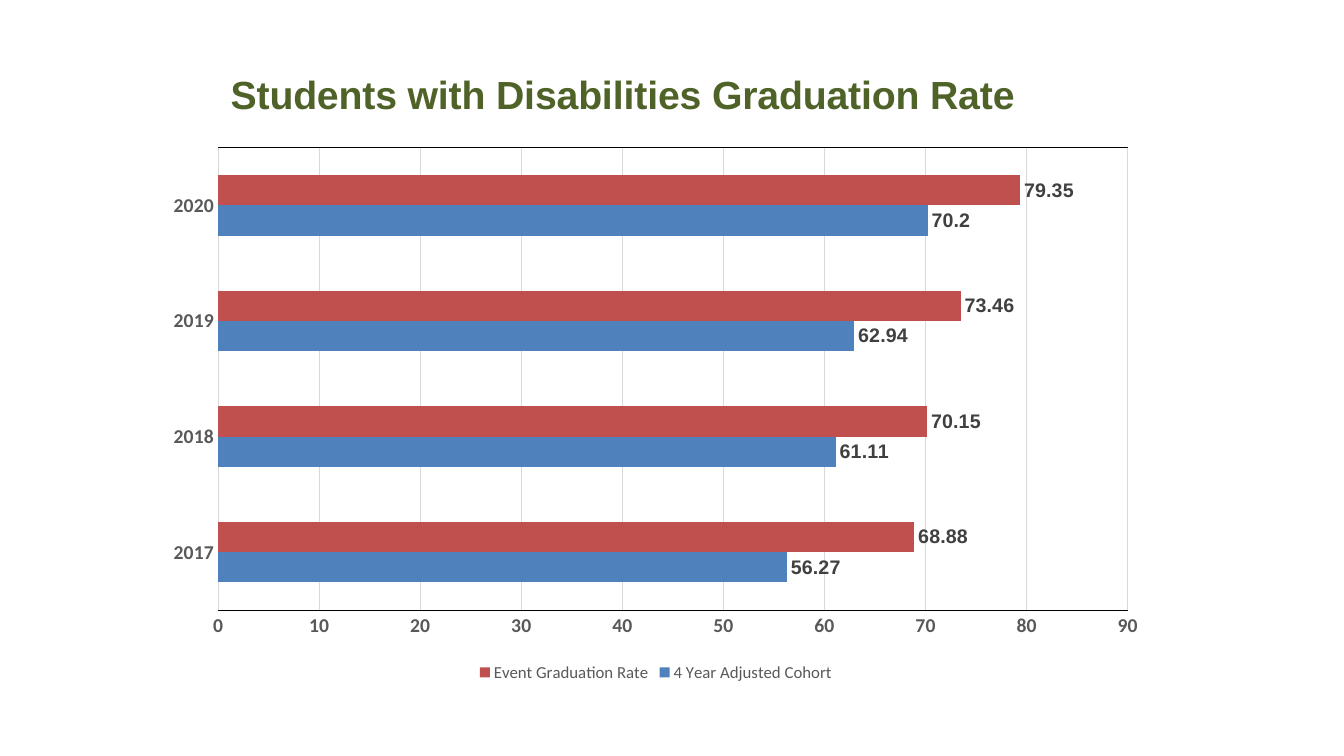
from lxml import etree
from pptx import Presentation
from pptx.chart.data import CategoryChartData
from pptx.dml.color import RGBColor
from pptx.enum.chart import (XL_CHART_TYPE, XL_LABEL_POSITION as LabelPos,
                             XL_LEGEND_POSITION as LegendPos, XL_TICK_MARK as Tick)
from pptx.oxml import parse_xml
from pptx.oxml.ns import nsdecls, qn
from pptx.util import Inches, Pt

BLUE = RGBColor(0x4F, 0x81, 0xBD)
RED = RGBColor(0xC0, 0x50, 0x4D)
GREEN = RGBColor(0x4F, 0x62, 0x28)
GRAY = RGBColor(0x59, 0x59, 0x59)
DARK = RGBColor(0x40, 0x40, 0x40)
LIGHT = RGBColor(0xD9, 0xD9, 0xD9)
BLACK = RGBColor(0, 0, 0)

TITLE = "Students with Disabilities Graduation Rate"
YEARS = ["2017", "2018", "2019", "2020"]
SERIES = [
    ("4 Year Adjusted Cohort", [56.27, 61.11, 62.94, 70.2], BLUE),
    ("Event Graduation Rate", [68.88, 70.15, 73.46, 79.35], RED),
]
CHART_BOX = (1.52, 0.5, 9.97, 6.31)
# Shares of the chart's size
TITLE_POS = {"x": 0.07, "y": 0.02}
PLOT_BOX = {"x": 0.0645, "y": 0.153, "w": 0.905, "h": 0.727}


def set_font(font, size, color, bold=False, name="Calibri"):
    font.size, font.bold, font.name = Pt(size), bold, name
    font.color.rgb = color


def set_layout(element, index, shares, inner=False):
    """Place a chart part by shares of the chart's size."""
    for old in element.findall(qn("c:layout")):
        element.remove(old)
    layout = parse_xml(f'<c:layout {nsdecls("c")}><c:manualLayout/></c:layout>')
    values = [("layoutTarget", "inner")] if inner else []
    values += [("xMode", "edge"), ("yMode", "edge"), *shares.items()]
    for tag, value in values:
        etree.SubElement(layout[0], qn(f"c:{tag}")).set("val", str(value))
    element.insert(index, layout)


def add_plot_border(plot_area):
    plot_area.append(parse_xml(
        f'<c:spPr {nsdecls("c", "a")}><a:noFill/><a:ln w="9525"><a:solidFill>'
        f'<a:srgbClr val="{BLACK}"/></a:solidFill></a:ln></c:spPr>'))


prs = Presentation()
prs.slide_width, prs.slide_height = Inches(13.33), Inches(7.5)
s = prs.slides.add_slide(prs.slide_layouts[6])

data = CategoryChartData()
data.categories = YEARS
for name, values, _ in SERIES:
    data.add_series(name, values)
chart = s.shapes.add_chart(XL_CHART_TYPE.BAR_CLUSTERED,
                           *map(Inches, CHART_BOX), data).chart
set_font(chart.font, 10, BLACK)

chart.has_title = True
tf = chart.chart_title.text_frame
tf.text = TITLE
set_font(tf.paragraphs[0].runs[0].font, 28, GREEN, True, "Arial")
chart.chart_title.include_in_layout = False
set_layout(chart.chart_title._element, 1, TITLE_POS)

plot = chart.plots[0]
plot.gap_width, plot.overlap = 182, 0
plot.vary_by_categories = False
for series, (_, _, color) in zip(plot.series, SERIES):
    series.format.fill.solid()
    series.format.fill.fore_color.rgb = color
    labels = series.data_labels
    labels.show_value = True
    labels.position = LabelPos.OUTSIDE_END
    set_font(labels.font, 14, DARK, True, "Arial")

for axis in (chart.category_axis, chart.value_axis):
    axis.major_tick_mark = axis.minor_tick_mark = Tick.NONE
    set_font(axis.tick_labels.font, 14, GRAY, True)
value_axis = chart.value_axis
value_axis.minimum_scale, value_axis.maximum_scale = 0, 90
value_axis.major_unit = 10
value_axis.format.line.fill.background()
value_axis.has_major_gridlines = True
for line in (chart.category_axis.format.line, value_axis.major_gridlines.format.line):
    line.color.rgb, line.width = LIGHT, Pt(0.75)

chart.has_legend = True
chart.legend.position = LegendPos.BOTTOM
chart.legend.include_in_layout = False
set_font(chart.legend.font, 12, GRAY)

plot_area = chart._chartSpace.chart.plotArea
set_layout(plot_area, 0, PLOT_BOX, inner=True)
add_plot_border(plot_area)

prs.save("out.pptx")
